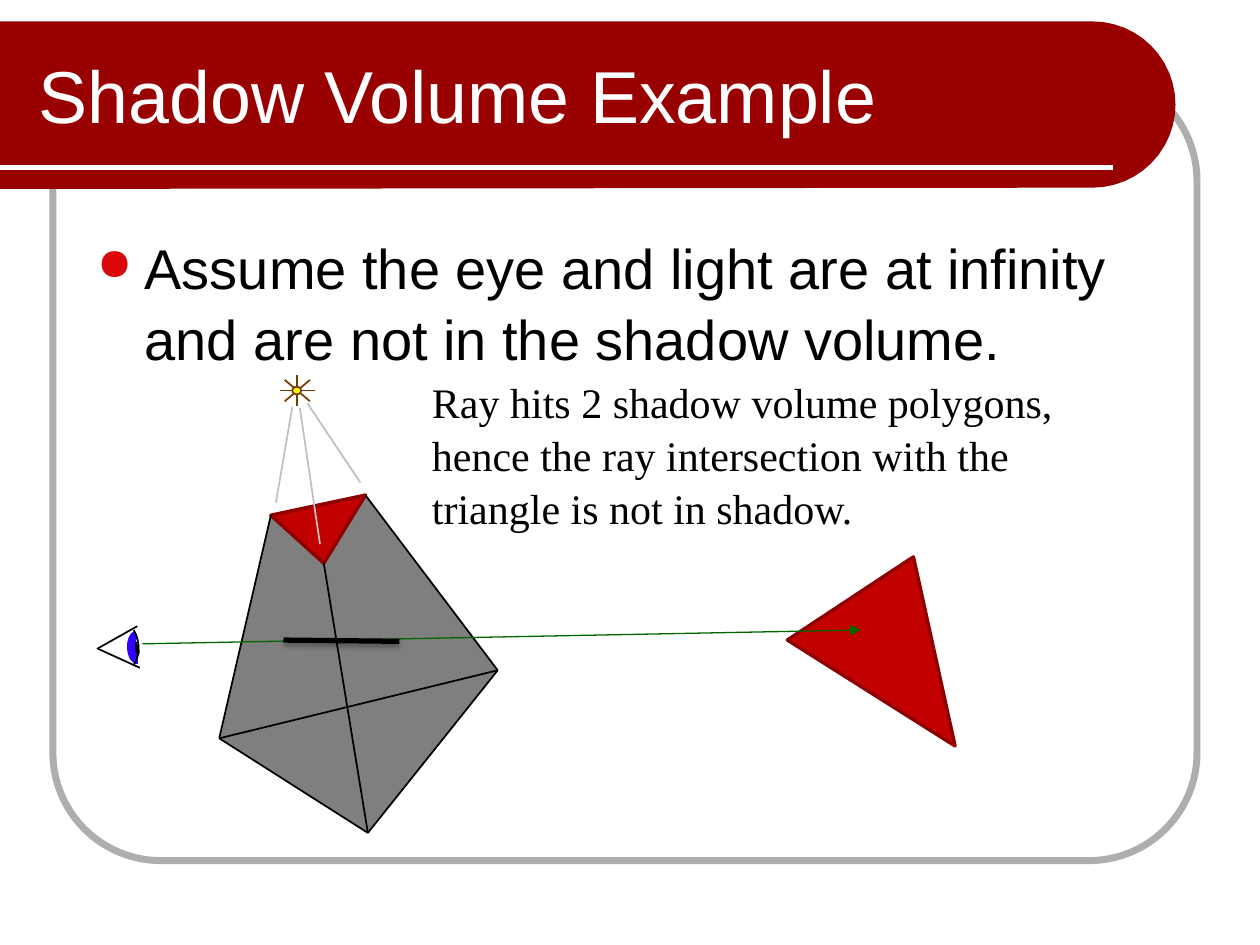
"""Build the slide "Shadow Volume Example"."""
import math

from lxml import etree
from pptx import Presentation, util as u
from pptx.dml.color import RGBColor
from pptx.enum import shapes, text
from pptx.oxml import ns

BLACK = RGBColor(0, 0, 0)
WHITE = RGBColor(0xFF, 0xFF, 0xFF)
FRAME = RGBColor(0xAE, 0xAE, 0xAE)
BANNER = RGBColor(0x99, 0x00, 0x00)
RED = RGBColor(0xC3, 0x00, 0x00)
DARK_RED = RGBColor(0x90, 0x00, 0x00)
IRIS = RGBColor(0x31, 0x01, 0xFF)
BROWN = RGBColor(0x78, 0x3C, 0x00)
YELLOW = RGBColor(0xFF, 0xFF, 0x00)
GREEN = RGBColor(0x00, 0x66, 0x00)
SILVER = RGBColor(0xC0, 0xC0, 0xC0)

TITLE = "Shadow Volume Example"
BODY = "Assume the eye and light are at infinity and are not in the shadow volume."
NOTE = ("Ray hits 2 shadow volume polygons, hence the ray intersection "
        "with the triangle is not in shadow.")

BLOCK_L, BLOCK_R, BLOCK_TIP = (2.15, 4.09), (2.9, 3.93), (2.57, 4.47)
FAR_L, FAR_R, FAR_TIP = (1.74, 5.86), (3.95, 5.32), (2.92, 6.61)
VOLUME = [BLOCK_L, BLOCK_TIP, BLOCK_R, FAR_R, FAR_TIP, FAR_L]
BLOCKER = [BLOCK_L, BLOCK_R, BLOCK_TIP]
TARGET = [(6.25, 5.08), (7.25, 4.42), (7.58, 5.92)]
EDGES = [(FAR_L, FAR_R), (BLOCK_R, FAR_R), (BLOCK_TIP, FAR_TIP), (BLOCK_L, FAR_L)]
EYELIDS = [((0.77, 5.15), (1.09, 4.97)), ((0.78, 5.15), (1.11, 5.3))]
LIGHT, SPARK = (2.36, 3.1), [(0, 0.125), (0.14, 0), (0.1, 0.085), (0.1, -0.085)]
BEAMS = [((2.32, 3.23), (2.19, 3.99)), ((2.38, 3.24), (2.54, 4.32)),
         ((2.44, 3.2), (2.86, 3.83))]
PUPIL = [(1.08, 5.06), (1.1, 5.09), (1.1, 5.12), (1.1, 5.18), (1.09, 5.21),
         (1.07, 5.18), (1.06, 5.13), (1.06, 5.09), (1.07, 5.07)]


def inch(v):
    return u.Cm(v * 2.54)


def arc(cx, cy, rx, ry, start, end, n=24):
    angles = [math.radians(start + (end - start) * i / n) for i in range(n + 1)]
    return [(cx + rx * math.cos(a), cy + ry * math.sin(a)) for a in angles]


def paint(s, fill=None, line=None, width=1):
    s.shadow.inherit = False
    if fill is None:
        s.fill.background()
    else:
        s.fill.solid()
        s.fill.fore_color.rgb = fill
    if line is None:
        s.line.fill.background()
    else:
        s.line.color.rgb = line
        s.line.width = u.Pt(width)
    return s


def poly(points, fill=None, line=None, width=1, close=True, rotation=0):
    pts = [(inch(x), inch(y)) for x, y in points]
    fb = sp_tree.build_freeform(*pts[0], scale=1.0)
    fb.add_line_segments(pts[1:], close=close)
    s = paint(fb.convert_to_shape(), fill, line, width)
    s.rotation = rotation
    return s


def preset(kind, box, fill=None, line=None, width=1):
    return paint(sp_tree.add_shape(kind, *map(inch, box)), fill, line, width)


def line(start, end, color, width=1):
    s = sp_tree.add_connector(shapes.MSO_CONNECTOR.STRAIGHT, *map(inch, start + end))
    s.line.color.rgb = color
    s.line.width = u.Pt(width)
    etree.SubElement(s._element.spPr, ns.qn("a:effectLst"))
    return s


def write(box, words, size, font, color, anchor=text.MSO_ANCHOR.TOP, spacing=1.0, bullet=False):
    tf = sp_tree.add_textbox(*map(inch, box)).text_frame
    tf.word_wrap = True
    tf.vertical_anchor = anchor
    p = tf.paragraphs[0]
    p.line_spacing = spacing
    if bullet:
        pPr = p._p.get_or_add_pPr()
        pPr.set("marL", str(inch(0.38)))
        pPr.set("indent", str(-inch(0.38)))
        clr = etree.SubElement(pPr, ns.qn("a:buClr"))
        etree.SubElement(clr, ns.qn("a:srgbClr"), val="DA0808")
        etree.SubElement(pPr, ns.qn("a:buSzPct"), val="80000")
        etree.SubElement(pPr, ns.qn("a:buChar"), char="●")
    r = p.add_run()
    r.text = words
    r.font.size, r.font.name, r.font.color.rgb = u.Pt(size), font, color


prs = Presentation()
prs.slide_width, prs.slide_height = inch(10), inch(7.5)
sp_tree = prs.slides.add_slide(prs.slide_layouts[6]).shapes

frame = preset(shapes.MSO_SHAPE.ROUNDED_RECTANGLE, (0.42, 0.58, 9.08, 6.25), None, FRAME, 4)
frame.adjustments[0] = 0.137
poly([(0, 0.17), *arc(8.67, 0.83, 0.66, 0.66, -90, 90), (0, 1.5)], BANNER)
line((0, 1.33), (8.83, 1.33), WHITE, 3)
write((0.21, 0.25, 7.79, 1), TITLE, 42, "Arial", WHITE, text.MSO_ANCHOR.MIDDLE)
write((0.67, 1.78, 8.67, 4.8), BODY, 32, "Arial", BLACK, spacing=1.05, bullet=True)

volume = poly(VOLUME, BLACK)
shade = volume._element.spPr.find(".//" + ns.qn("a:srgbClr"))
etree.SubElement(shade, ns.qn("a:alpha"), val="50000")

poly(PUPIL, BLACK, rotation=167.9)
poly(arc(1.09, 5.14, 0.05, 0.1, 90, 260), None, IRIS, 4.5, False, 357.4)
for start, end in EYELIDS:
    line(start, end, BLACK)
poly(arc(0.83, 5.14, 0.27, 0.27, -31, 31), None, BLACK, 1, False)

line(*EDGES[0], BLACK)
for dx, dy in SPARK:
    line((LIGHT[0] - dx, LIGHT[1] - dy), (LIGHT[0] + dx, LIGHT[1] + dy), BROWN)
preset(shapes.MSO_SHAPE.OVAL, (2.32, 3.07, 0.07, 0.06), YELLOW, BROWN)

poly(BLOCKER, RED, DARK_RED, 2)
for start, end in EDGES[1:]:
    line(start, end, BLACK)
poly([FAR_L, FAR_TIP, FAR_R], None, BLACK, 1, False)
poly(TARGET, RED, DARK_RED, 2)

ray = line((1.13, 5.11), (6.83, 5), GREEN, 0.75)
etree.SubElement(ray.line._get_or_add_ln(), ns.qn("a:tailEnd"), type="triangle")
write((3.33, 2.92, 5.58, 1.31), NOTE, 24, "Times New Roman", BLACK, spacing=1.05)

bar = line((2.25, 5.08), (3.17, 5.09), BLACK, 3)
shadow = etree.SubElement(bar._element.spPr.find(ns.qn("a:effectLst")), ns.qn("a:outerShdw"),
                          blurRad=str(u.Pt(3.1)), dist=str(u.Pt(1.8)), dir="5400000", rotWithShape="0")
tint = etree.SubElement(shadow, ns.qn("a:srgbClr"), val="000000")
etree.SubElement(tint, ns.qn("a:alpha"), val="35000")
for start, end in BEAMS:
    line(start, end, SILVER)

prs.save("out.pptx")
